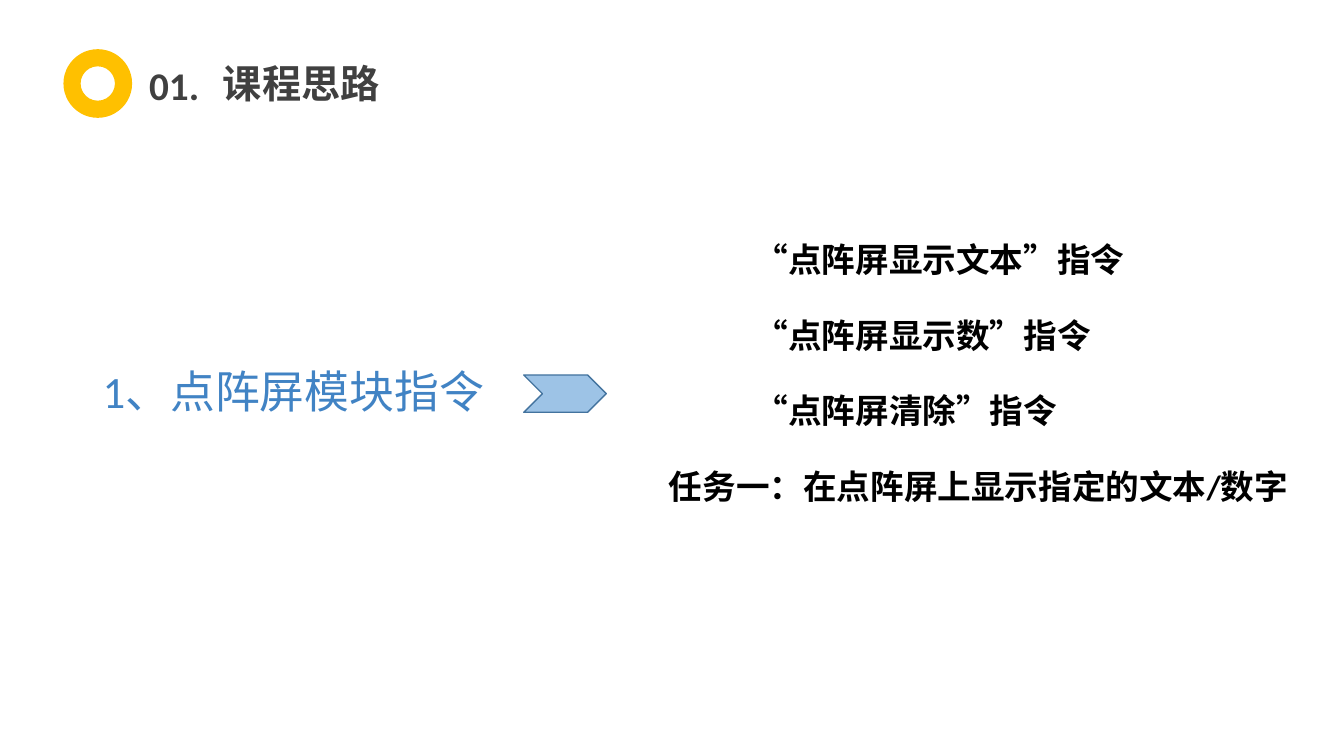
"""Build the course outline slide for the dot-matrix display module."""
import pptx
import pptx.dml.color
import pptx.enum.lang
import pptx.enum.shapes
import pptx.enum.text
import pptx.util

Cm = pptx.util.Cm
Pt = pptx.util.Pt
SHAPES = pptx.enum.shapes.MSO_SHAPE
ALIGN = pptx.enum.text.PP_ALIGN

COLORS = {
    "heading": "404040",
    "ring": "FFC000",
    "topic": "4183C4",
    "arrow": "9DC3E6",
    "arrow_edge": "43739E",
    "body": "000000",
}


class OutlineSlide:
    font_name = "Calibri"

    def __init__(self, deck):
        self.slide = deck.slides.add_slide(deck.slide_layouts[6])

    def color(self, name):
        return pptx.dml.color.RGBColor.from_string(COLORS[name])

    def text(self, wording, left, top, width, height, size, color,
             bold=True, wrap=True, align=ALIGN.LEFT):
        box = self.slide.shapes.add_textbox(Cm(left), Cm(top), Cm(width), Cm(height))
        frame = box.text_frame
        frame.word_wrap = wrap
        frame.auto_size = pptx.enum.text.MSO_AUTO_SIZE.SHAPE_TO_FIT_TEXT
        paragraph = frame.paragraphs[0]
        paragraph.text = wording
        paragraph.alignment = align
        font = paragraph.font
        font.name = self.font_name
        font.size = Pt(size)
        font.bold = bold
        font.color.rgb = self.color(color)
        font.language_id = pptx.enum.lang.MSO_LANGUAGE_ID.SIMPLIFIED_CHINESE

    def shape(self, kind, left, top, width, height, fill, edge=None):
        marker = self.slide.shapes.add_shape(
            kind, Cm(left), Cm(top), Cm(width), Cm(height))
        marker.shadow.inherit = False
        marker.fill.solid()
        marker.fill.fore_color.rgb = self.color(fill)
        if edge:
            marker.line.color.rgb = self.color(edge)
            marker.line.width = Pt(1)
        else:
            marker.line.fill.background()


def main():
    deck = pptx.Presentation()
    deck.slide_width = Cm(33.87)
    deck.slide_height = Cm(19.05)
    outline = OutlineSlide(deck)

    outline.text("课程思路", 5.33, 1.37, 4.52, 1.45, 28, "heading",
                 wrap=False, align=ALIGN.CENTER)
    outline.text("01.", 3.51, 1.42, 1.9, 1.45, 28, "heading", wrap=False)
    outline.shape(SHAPES.DONUT, 1.6, 1.24, 1.73, 1.73, "ring")

    outline.text("1、点阵屏模块指令", 2.34, 9.04, 10.21, 1.63, 32, "topic", bold=False)
    outline.shape(SHAPES.CHEVRON, 13.2, 9.45, 2.08, 0.94, "arrow", "arrow_edge")

    first_top, pitch = 5.89, 1.91
    steps = [
        ("“点阵屏显示文本”指令", 18.77, 9.96),
        ("“点阵屏显示数”指令", 18.77, 9.12),
        ("“点阵屏清除”指令", 18.77, 8.48),
        ("任务一：在点阵屏上显示指定的文本/数字", 16.61, 16.36),
    ]
    for row, (wording, left, width) in enumerate(steps):
        outline.text(wording, left, first_top + row * pitch, width, 1.27, 24, "body")

    deck.save("out.pptx")


if __name__ == "__main__":
    main()
